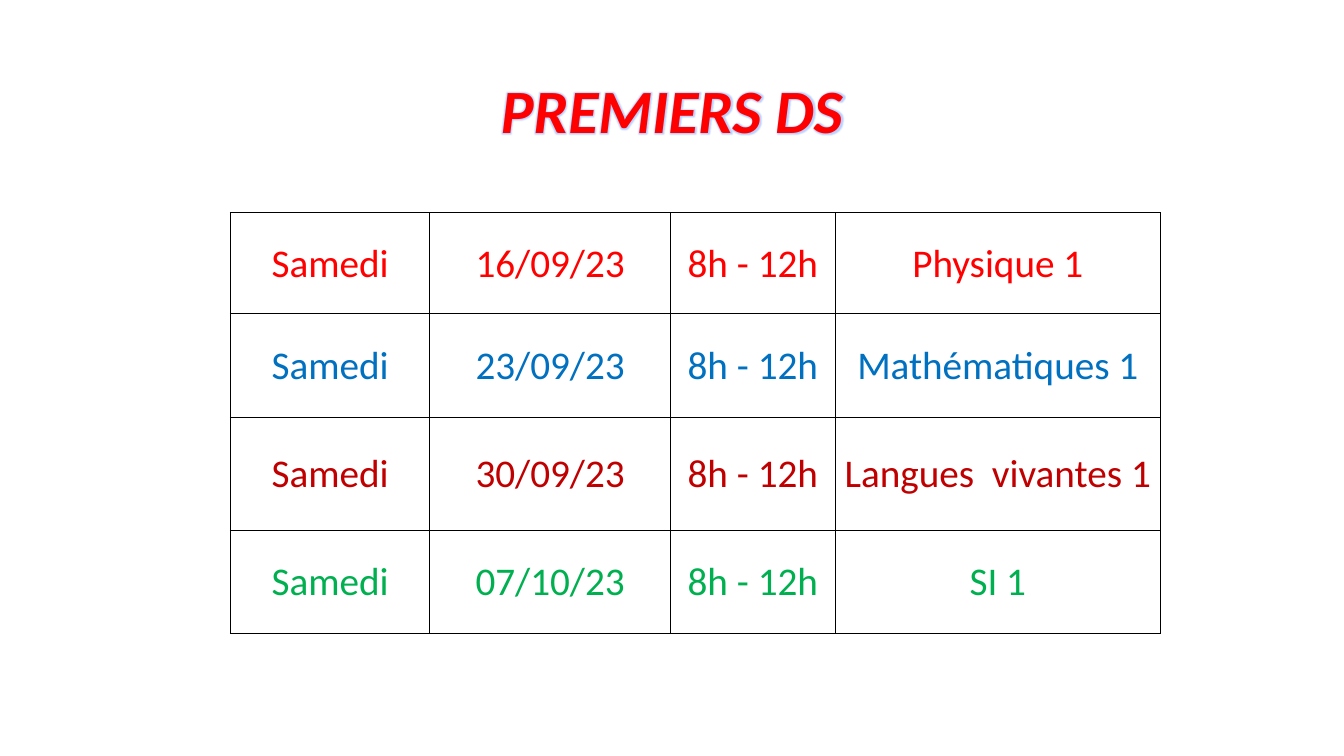
from lxml import etree
from pptx import Presentation
from pptx.dml.color import RGBColor
from pptx.enum import shapes, text
from pptx.oxml import ns
from pptx.util import Pt

WHITE = RGBColor(0xFF, 0xFF, 0xFF)
BLACK = RGBColor(0x00, 0x00, 0x00)
RED = RGBColor(0xFF, 0x00, 0x00)
BLUE = RGBColor(0x00, 0x70, 0xC0)
DARK_RED = RGBColor(0xC0, 0x00, 0x00)
GREEN = RGBColor(0x00, 0xB0, 0x50)
GLOW = RGBColor(0x3A, 0x7C, 0xFF)

DAY, HOURS = "Samedi", "8h - 12h"
TESTS = [
    ("16/09/23", "Physique 1", RED),
    ("23/09/23", "Mathématiques 1", BLUE),
    ("30/09/23", "Langues  vivantes 1", DARK_RED),
    ("07/10/23", "SI 1", GREEN),
]
COLUMN_WIDTHS = [142.5, 172, 117.5, 232.5]
ROW_HEIGHTS = [72, 74, 80.5, 74]


def add_element(parent, tag, **attributes):
    return etree.SubElement(parent, ns.qn(tag), attributes)


def add_solid_fill(parent, color):
    fill = add_element(parent, "a:solidFill")
    return add_element(fill, "a:srgbClr", val=str(color))


def write(frame, words, *, size, color, bold=False, italic=False, spacing=None):
    """Put one centred line in a text frame and return its run."""
    para = frame.paragraphs[0]
    para.alignment = text.PP_ALIGN.CENTER
    if spacing:
        para.line_spacing = spacing
    span = para.add_run()
    span.text = words
    font = span.font
    font.size, font.bold, font.italic = Pt(size), bold, italic
    font.color.rgb = color
    font.name = "Calibri"
    return span


def outline_and_glow(span):
    """Give a coloured run a white outline and a soft blue glow."""
    properties = span.font.fill._xPr
    outline = etree.Element(ns.qn("a:ln"), w=str(Pt(1.06)))
    add_solid_fill(outline, WHITE)
    properties.insert(0, outline)
    effects = etree.Element(ns.qn("a:effectLst"))
    glow = add_element(effects, "a:glow", rad=str(Pt(3.6)))
    color = add_element(glow, "a:srgbClr", val=str(GLOW))
    add_element(color, "a:alpha", val="35000")
    properties.find(ns.qn("a:solidFill")).addnext(effects)


def add_title(page, words):
    box = page.shapes.add_shape(
        shapes.MSO_SHAPE.RECTANGLE, Pt(66), Pt(28.75), Pt(828), Pt(104.5))
    box.shadow.inherit = False
    box.fill.solid()
    box.fill.fore_color.rgb = WHITE
    box.line.color.rgb = WHITE
    box.line.width = Pt(0.75)
    box.text_frame.vertical_anchor = text.MSO_ANCHOR.MIDDLE
    span = write(box.text_frame, words, size=44, color=RED,
                 bold=True, italic=True, spacing=0.9)
    outline_and_glow(span)


def style_cell(cell):
    cell.vertical_anchor = text.MSO_ANCHOR.MIDDLE
    cell.margin_left = cell.margin_right = cell.margin_top = Pt(0.75)
    cell.margin_bottom = 0
    properties = cell._tc.get_or_add_tcPr()
    for side in ("a:lnL", "a:lnR", "a:lnT", "a:lnB"):
        border = add_element(properties, side, w=str(Pt(0.5)))
        add_solid_fill(border, BLACK)
    cell.fill.background()


def add_schedule(page):
    frame = page.shapes.add_table(
        len(TESTS), len(COLUMN_WIDTHS), Pt(164.5), Pt(152),
        Pt(sum(COLUMN_WIDTHS)), Pt(sum(ROW_HEIGHTS)))
    table = frame.table
    table.first_row = table.horz_banding = False
    for column, width in zip(table.columns, COLUMN_WIDTHS):
        column.width = Pt(width)
    for row, height, (date, subject, color) in zip(table.rows, ROW_HEIGHTS, TESTS):
        row.height = Pt(height)
        for cell, words in zip(row.cells, (DAY, date, HOURS, subject)):
            style_cell(cell)
            write(cell.text_frame, words, size=28, color=color)


def main():
    deck = Presentation()
    deck.slide_width, deck.slide_height = Pt(960), Pt(540)
    page = deck.slides.add_slide(deck.slide_layouts[6])
    add_title(page, "PREMIERS DS")
    add_schedule(page)
    deck.save("out.pptx")


if __name__ == "__main__":
    main()
